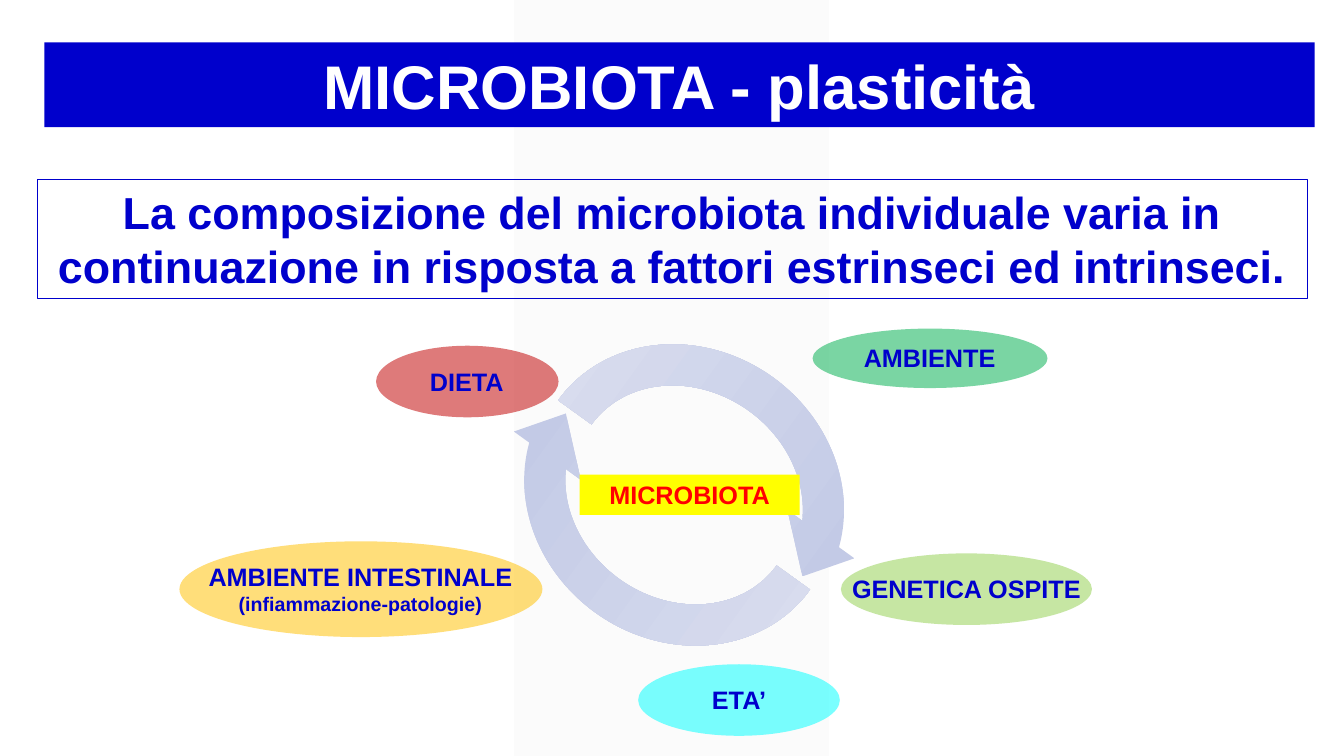
from lxml.etree import SubElement
from pptx import Presentation
from pptx.dml.color import RGBColor
from pptx.enum.shapes import MSO_SHAPE as Kind
from pptx.enum.text import MSO_ANCHOR as Anchor, MSO_AUTO_SIZE as Auto, PP_ALIGN as Align
from pptx.oxml.ns import qn
from pptx.util import Pt

PX = 9144  # 100 px to the inch
WIDE, HIGH = 1333, 750
FONT = "Arial"
HEX = {
    "band": "F2F2F2", "blue": "0000CC", "white": "FFFFFF",
    "red": "FF0000", "yellow": "FFFF00",
    "diet": "C00000", "genes": "92D050", "gut": "FFC000",
    "age": "00FFFF", "place": "00B050",
    "arrow": "C3CAE6", "pale": "E2E5F2",
}

# Ellipse box, colour, label width and height, lines with their sizes
FACTORS = [
    ((373, 343, 181, 71), "diet", (94, 40), [("DIETA", 18)]),
    ((834, 549, 249, 71), "genes", (249, 40), [("GENETICA OSPITE", 18)]),
    ((178, 537, 360, 95), "gut", (325, 64),
     [("AMBIENTE INTESTINALE", 18), ("(infiammazione-patologie)", 14)]),
    ((633, 659, 200, 71), "age", (74, 40), [("ETA’", 18)]),
    ((806, 326, 233, 59), "place", (152, 40), [("AMBIENTE", 18)]),
]


def color(name):
    return RGBColor.from_string(HEX[name])


def scale(box):
    return [n * PX for n in box]


def paint(shape, name, alpha=100):
    """Solid fill with an opacity in percent."""
    shape.fill.solid()
    shape.fill.fore_color.rgb = color(name)
    if alpha < 100:
        tint = shape.fill._xPr.find(".//" + qn("a:srgbClr"))
        SubElement(tint, qn("a:alpha")).set("val", str(alpha * 1000))


def draw(shapes, kind, box):
    """Preset shape with no outline and no shadow."""
    shape = shapes.add_shape(kind, *scale(box))
    shape.shadow.inherit = False
    shape.line.fill.background()
    return shape


def write(shape, lines, name, wrap=True):
    """Centred bold lines, each given as text and size."""
    frame = shape.text_frame
    frame.text = "\n".join(text for text, size in lines)
    frame.word_wrap = wrap
    frame.auto_size = Auto.SHAPE_TO_FIT_TEXT
    frame.vertical_anchor = Anchor.MIDDLE
    for para, (text, size) in zip(frame.paragraphs, lines):
        para.alignment = Align.CENTER
        for run in para.runs:
            font = run.font
            font.name, font.size, font.bold = FONT, Pt(size), True
            font.color.rgb = color(name)


def add_band(shapes, box):
    band = draw(shapes, Kind.PARALLELOGRAM, box)
    band.adjustments[0] = 0
    paint(band, "band", 30)
    shapes._spTree.insert(2, band._element)  # behind the title


def add_title(title, box):
    title.left, title.top, title.width, title.height = scale(box)
    paint(title, "blue")
    write(title, [("MICROBIOTA - plasticità", 44)], "white")


def add_claim(shapes, box):
    claim = draw(shapes, Kind.RECTANGLE, box)
    claim.fill.background()
    claim.line.color.rgb = color("blue")
    claim.line.width = Pt(0.75)
    text = ("La composizione del microbiota individuale varia in "
            "continuazione in risposta a fattori estrinseci ed intrinseci.")
    write(claim, [(text, 32)], "blue")


def add_cycle(shapes, box):
    """Two facing arrows around the central label."""
    left, top, width, height = box
    for dx, dy, turn in ((9, 0, 35.8), (0, 1, 215.8)):
        arrow = draw(shapes, Kind.CIRCULAR_ARROW, (left + dx, top + dy, width, height))
        arrow.rotation = turn
        arrow.fill.gradient()
        arrow.fill.gradient_angle = 180
        stops = zip(arrow.fill.gradient_stops, (("arrow", 0.25), ("pale", 1)))
        for stop, (name, place) in stops:
            stop.color.rgb = color(name)
            stop.position = place
    core = draw(shapes, Kind.RECTANGLE, (left + 81, top + 144, 218, 40))
    paint(core, "yellow")
    write(core, [("MICROBIOTA", 18)], "red")


def add_factor(shapes, box, name, size, lines):
    """Ellipse with its label centred on it."""
    left, top, width, height = box
    wide, high = size
    group = shapes.add_group_shape().shapes
    paint(draw(group, Kind.OVAL, box), name, 52)
    spot = (left + (width - wide) // 2, top + (height - high) // 2, wide, high)
    write(group.add_textbox(*scale(spot)), lines, "blue", wrap=False)


def main():
    deck = Presentation()
    deck.slide_width, deck.slide_height = scale((WIDE, HIGH))
    slide = deck.slides.add_slide(deck.slide_layouts[5])
    shapes = slide.shapes

    # Background and heading
    add_band(shapes, (510, 0, 312, HIGH))
    add_title(shapes.title, (44, 42, 1260, 84))
    add_claim(shapes, (37, 178, 1260, 118))

    # Cycle and its factors
    add_cycle(shapes, (494, 327, 360, 327))
    for factor in FACTORS:
        add_factor(shapes, *factor)

    deck.save("out.pptx")


if __name__ == "__main__":
    main()
